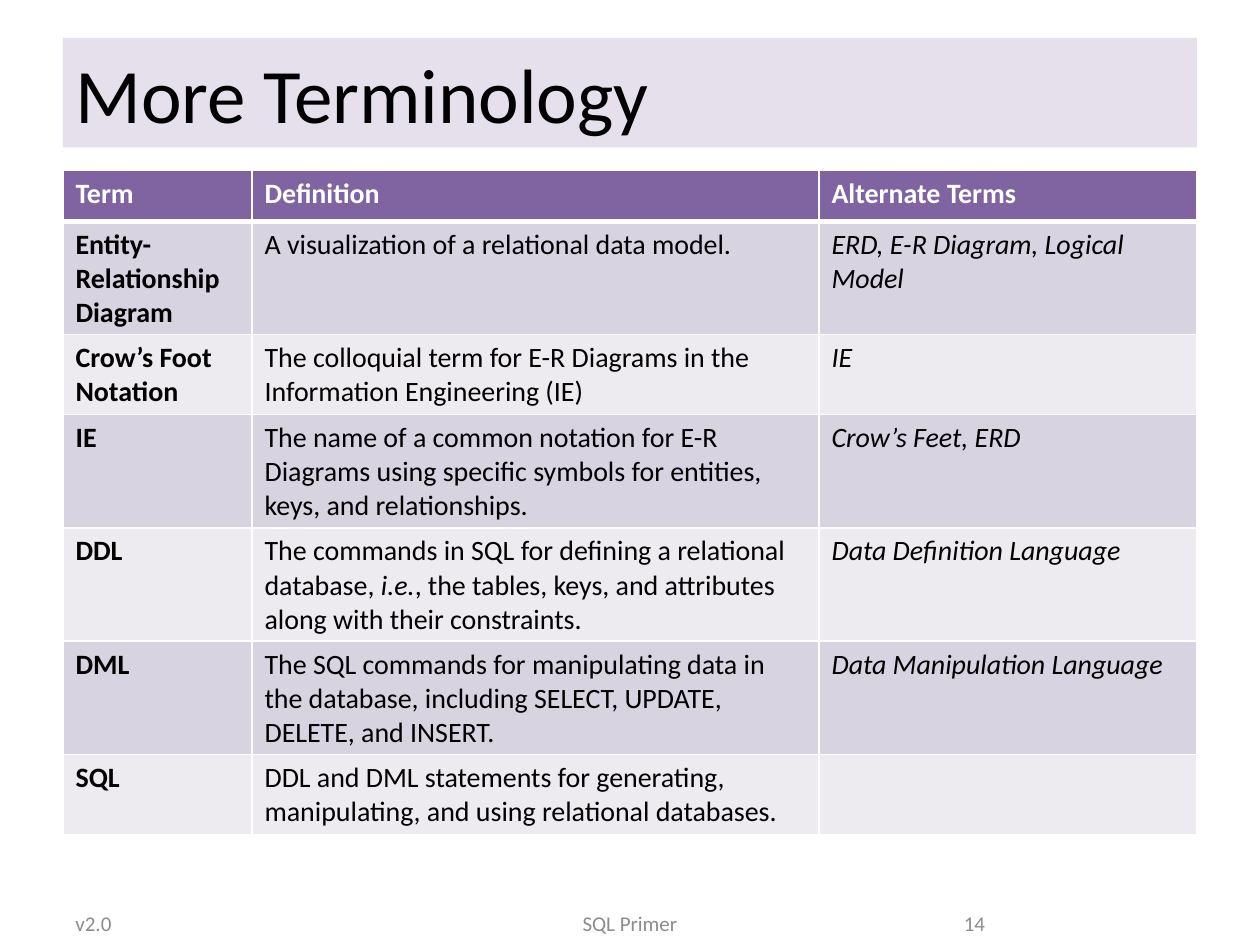
from lxml import etree
from pptx import Presentation
from pptx.dml.color import RGBColor
from pptx.enum import text
from pptx.oxml import ns
from pptx.util import Pt

ALIGN = text.PP_ALIGN


def color(value):
    return RGBColor.from_string(value)


def add_label(words, left, top, width, height, size, ink, align):
    box = slide.shapes.add_textbox(Pt(left), Pt(top), Pt(width), Pt(height))
    frame = box.text_frame
    frame.word_wrap = True
    frame.vertical_anchor = text.MSO_ANCHOR.MIDDLE
    line = frame.paragraphs[0]
    line.text = words
    line.alignment = align
    line.font.name = "Calibri"
    line.font.size = Pt(size)
    line.font.color.rgb = color(ink)
    return box


deck = Presentation()
deck.slide_width, deck.slide_height = Pt(720), Pt(540)
slide = deck.slides.add_slide(deck.slide_layouts[6])

# Title band
title = add_label("More Terminology", 36, 21.6, 648, 62.64, 44, "000000", ALIGN.LEFT)
title.fill.solid()
title.fill.fore_color.rgb = color("E6E0EC")

# Glossary: a tuple holds the runs of a cell, every second one in italics
glossary = [
    ("Term", "Definition", "Alternate Terms"),
    ("Entity-Relationship Diagram",
     "A visualization of a relational data model.",
     "ERD, E-R Diagram, Logical Model"),
    ("Crow’s Foot Notation",
     "The colloquial term for E-R Diagrams in the Information Engineering (IE)",
     "IE"),
    ("IE",
     "The name of a common notation for E-R Diagrams using specific symbols "
     "for entities, keys, and relationships.",
     "Crow’s Feet, ERD"),
    ("DDL",
     ("The commands in SQL for defining a relational database, ", "i.e.",
      ", the tables, keys, and attributes along with their constraints."),
     "Data Definition Language"),
    ("DML",
     "The SQL commands for manipulating data in the database, including "
     "SELECT, UPDATE, DELETE, and INSERT.",
     "Data Manipulation Language"),
    ("SQL",
     "DDL and DML statements for generating, manipulating, and using "
     "relational databases.",
     ""),
]
column_widths = [108, 324, 216]
row_height = 29.2  # least height; rows grow with their text

terms = slide.shapes.add_table(
    len(glossary), len(column_widths), Pt(36), Pt(97.2),
    Pt(sum(column_widths)), Pt(row_height * len(glossary))).table
for column, width in zip(terms.columns, column_widths):
    column.width = Pt(width)

for r, entry in enumerate(glossary):
    terms.rows[r].height = Pt(row_height)
    header = r == 0
    band = "8064A2" if header else ("D8D3E0" if r % 2 else "EDEAF0")
    for c, content in enumerate(entry):
        cell = terms.cell(r, c)

        # White rules, heavier between header and body
        properties = cell._tc.get_or_add_tcPr()
        for side in ("L", "R", "T", "B"):
            heavy = (r, side) in ((0, "B"), (1, "T"))
            rule = etree.SubElement(properties, ns.qn("a:ln" + side),
                                    w=str(Pt(3 if heavy else 1)))
            paint = etree.SubElement(rule, ns.qn("a:solidFill"))
            etree.SubElement(paint, ns.qn("a:srgbClr"), val="FFFFFF")
        cell.fill.solid()
        cell.fill.fore_color.rgb = color(band)

        # Wording
        line = cell.text_frame.paragraphs[0]
        if isinstance(content, tuple):
            for i, piece in enumerate(content):
                run = line.add_run()
                run.text = piece
                run.font.italic = i % 2 == 1
        else:
            line.text = content
            line.font.italic = c == 2 and not header
        line.font.name = "Calibri"
        line.font.size = Pt(16)
        line.font.bold = header or c == 0
        line.font.color.rgb = color("FFFFFF" if header else "000000")

# Footer
for words, left, width, align in [
    ("v2.0", 36, 168, ALIGN.LEFT),
    ("SQL Primer", 246, 228, ALIGN.CENTER),
    ("14", 516, 54, ALIGN.RIGHT),
]:
    add_label(words, left, 516.25, width, 22.5, 12, "8C8C8C", align)

deck.save("out.pptx")
